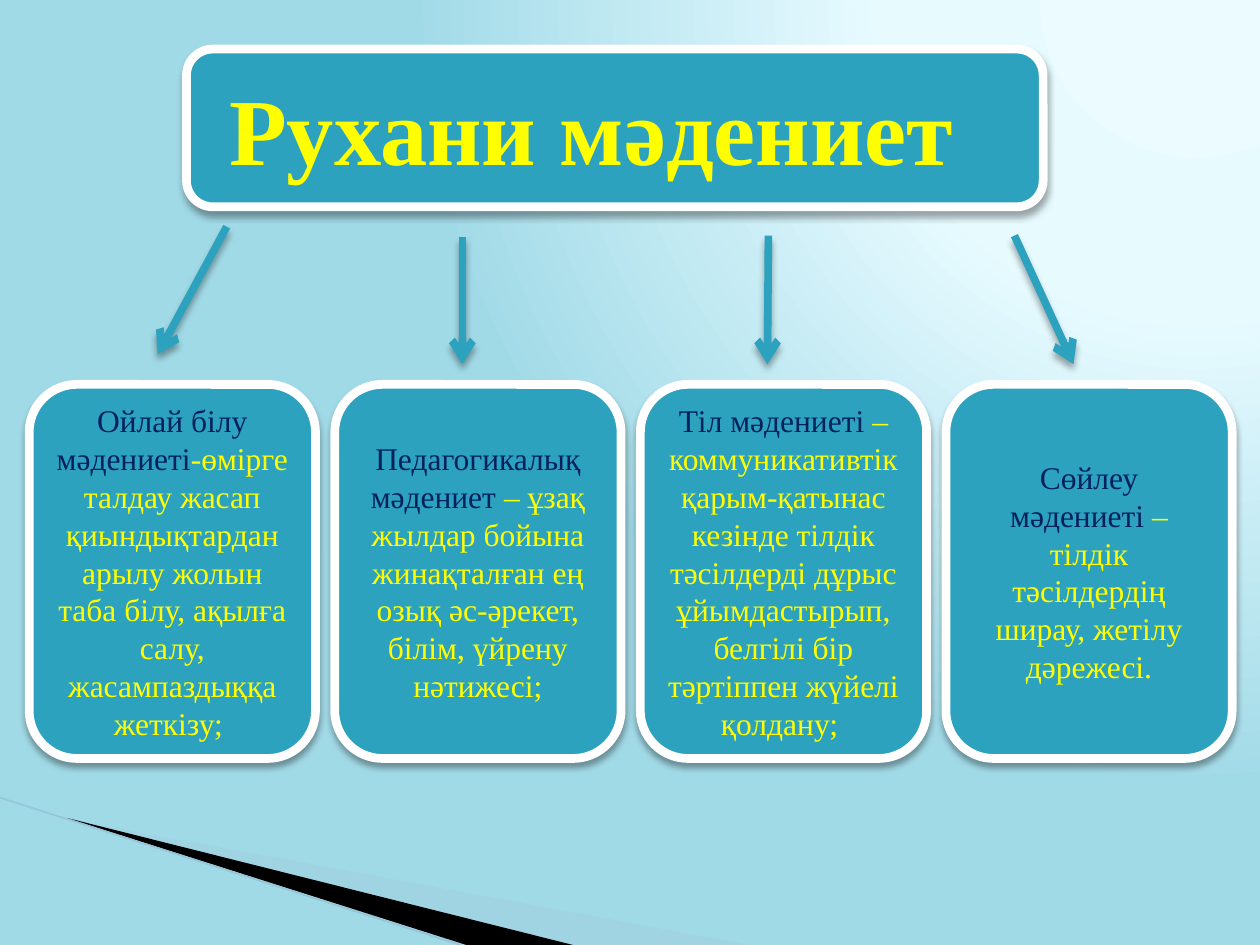
"""Build the slide on spiritual culture and its four components."""
from pptx import Presentation
from pptx.dml.color import RGBColor
from pptx.enum.shapes import MSO_CONNECTOR, MSO_SHAPE
from pptx.enum.text import MSO_ANCHOR, PP_ALIGN
from pptx.oxml import parse_xml
from pptx.oxml.ns import nsdecls
from pptx.util import Cm, Pt

ROUNDED = MSO_SHAPE.ROUNDED_RECTANGLE
STRAIGHT = MSO_CONNECTOR.STRAIGHT
MIDDLE = MSO_ANCHOR.MIDDLE
CENTER = PP_ALIGN.CENTER

TEAL = RGBColor(0x2D, 0xA2, 0xBF)
WHITE = RGBColor(0xFF, 0xFF, 0xFF)
YELLOW = RGBColor(0xFF, 0xFF, 0x00)
NAVY = RGBColor(0x00, 0x20, 0x60)
BLACK = RGBColor(0x00, 0x00, 0x00)
PALE_BLUE = RGBColor(0xA0, 0xCB, 0xDC)
EDGE_BLUE = RGBColor(0x97, 0xC5, 0xD8)
GLOW = ((0, RGBColor(0xEB, 0xFB, 0xFF)), (40, RGBColor(0xE7, 0xFB, 0xFF)),
        (100, RGBColor(0xA1, 0xDA, 0xE7)))

FRAME_FORMAT = {"word_wrap": True, "vertical_anchor": MIDDLE}
TITLE_FORMAT = {"name": "Times New Roman", "size": Pt(54), "bold": True}
CARD_FORMAT = {"name": "Times New Roman", "size": Pt(18)}


def add_shadow(part):
    for effects in part._element.spPr.findall(
            "{http://schemas.openxmlformats.org/drawingml/2006/main}effectLst"):
        part._element.spPr.remove(effects)
    part._element.spPr.append(parse_xml(
        f'<a:effectLst {nsdecls("a")}><a:outerShdw blurRad="{Pt(4)}" dist="{Pt(3)}" '
        'dir="5400000" rotWithShape="0"><a:srgbClr val="000000"><a:alpha val="35000"/>'
        '</a:srgbClr></a:outerShdw></a:effectLst>'))


def add_box(left, top, width, height, runs, font_format):
    box = slide.shapes.add_shape(ROUNDED, Cm(left), Cm(top), Cm(width), Cm(height))
    box.fill.solid()
    box.fill.fore_color.rgb = TEAL
    box.line.color.rgb = WHITE
    box.line.width = Pt(5)
    add_shadow(box)
    for key, value in FRAME_FORMAT.items():
        setattr(box.text_frame, key, value)
    paragraph = box.text_frame.paragraphs[0]
    paragraph.alignment = CENTER
    for text, color in runs:
        run = paragraph.add_run()
        run.text = text
        run.font.color.rgb = color
        for key, value in font_format.items():
            setattr(run.font, key, value)
    return box


presentation = Presentation()
presentation.slide_width = Cm(25.4)
presentation.slide_height = Cm(19.05)
slide = presentation.slides.add_slide(presentation.slide_layouts[6])

background = slide.background.fill
background.solid()
background.fore_color.rgb = GLOW[-1][1]
plain_fill = slide._element.cSld.bg.bgPr[0]
stops = "".join(f'<a:gs pos="{position * 1000}"><a:srgbClr val="{color}"/></a:gs>'
                for position, color in GLOW)
plain_fill.getparent().replace(plain_fill, parse_xml(
    f'<a:gradFill {nsdecls("a")} rotWithShape="1"><a:gsLst>{stops}</a:gsLst>'
    '<a:path path="circle"><a:fillToRect l="95000" t="-106000" r="5000" b="206000"/>'
    '</a:path></a:gradFill>'))

wedges = [
    (PALE_BLUE, 40, [(1.4, 16.52), (15.1, 19.05), (11.56, 19.05)]),
    (BLACK, 100, [(1.35, 16.49), (11.55, 19.05), (9.4, 19.05)]),
]
for color, opacity, corners in wedges:
    start, *others = [(Cm(x), Cm(y)) for x, y in corners]
    builder = slide.shapes.build_freeform(*start)
    builder.add_line_segments(others, close=True)
    wedge = builder.convert_to_shape()
    wedge.shadow.inherit = False
    wedge.fill.solid()
    wedge.fill.fore_color.rgb = color
    wedge.line.fill.background()
    wedge.fill._xPr.solidFill[0].append(
        parse_xml(f'<a:alpha {nsdecls("a")} val="{opacity * 1000}"/>'))

edge = slide.shapes.add_connector(STRAIGHT, Cm(0), Cm(16.08), Cm(9.28), Cm(19.05))
edge.line.color.rgb = EDGE_BLUE
edge.line.width = Pt(0.95)
edge._element.spPr.append(parse_xml(f'<a:effectLst {nsdecls("a")}/>'))

title = add_box(3.76, 0.99, 17.27, 3.18, [("Рухани мәдениет", YELLOW)], TITLE_FORMAT)
title.text_frame.margin_right = Cm(1.2)

cards = [
    ("Ойлай білу мәдениеті",
     "-өмірге талдау жасап қиындықтардан арылу жолын таба білу, ақылға салу, "
     "жасампаздыққа жеткізу; "),
    ("Педагогикалық мәдениет ",
     "– ұзақ жылдар бойына жинақталған ең озық әс-әрекет, білім, үйрену нәтижесі;"),
    ("Тіл мәдениеті ",
     "– коммуникативтік қарым-қатынас кезінде тілдік тәсілдерді дұрыс "
     "ұйымдастырып, белгілі бір тәртіппен жүйелі қолдану; "),
    ("Сөйлеу мәдениеті ", "– тілдік тәсілдердің ширау, жетілу дәрежесі."),
]
for index, (term, meaning) in enumerate(cards):
    add_box(0.59 + 6.16 * index, 7.75, 5.77, 7.54,
            [(term, NAVY), (meaning, YELLOW)], CARD_FORMAT)

branches = [(4.57, 4.57, 3.18, 7.14), (9.32, 4.78, 9.32, 7.34),
            (15.49, 4.75, 15.47, 7.34), (20.45, 4.75, 21.64, 7.34)]
for ends in branches:
    branch = slide.shapes.add_connector(STRAIGHT, *map(Cm, ends))
    branch.line.color.rgb = TEAL
    branch.line.width = Pt(4.33)
    branch.line._get_or_add_ln().append(
        parse_xml(f'<a:tailEnd {nsdecls("a")} type="arrow"/>'))
    add_shadow(branch)

presentation.save("out.pptx")
